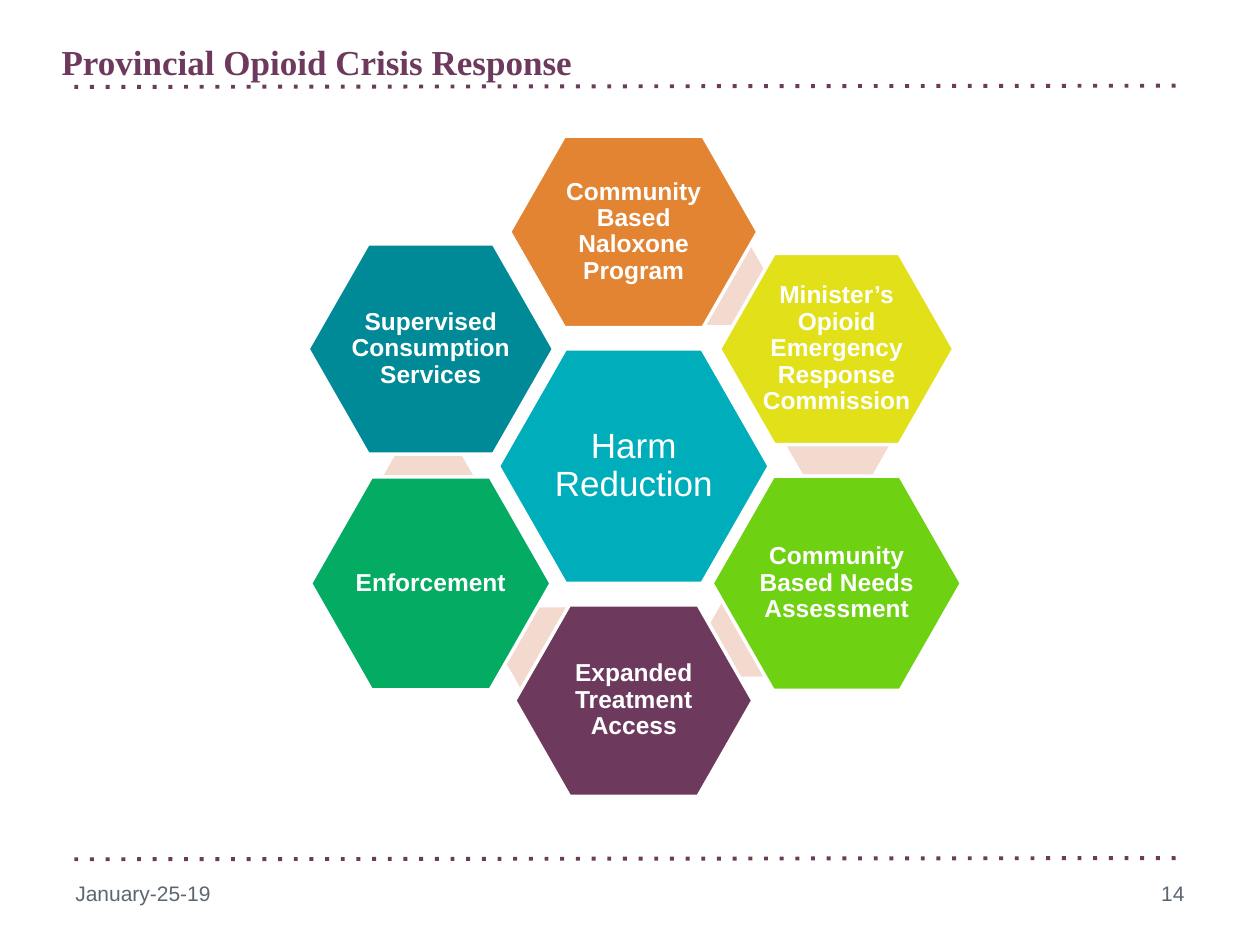
from dataclasses import dataclass
from math import cos, radians, sin

from lxml import etree
from pptx import Presentation
from pptx.dml.color import RGBColor
from pptx.enum.dml import MSO_LINE
from pptx.enum.shapes import MSO_CONNECTOR, MSO_SHAPE
from pptx.enum.text import MSO_ANCHOR, PP_ALIGN
from pptx.oxml.ns import qn
from pptx.util import Pt

PX = 9144  # 100 px to the inch
HEXAGON = MSO_SHAPE.HEXAGON
STRAIGHT = MSO_CONNECTOR.STRAIGHT
DOT = MSO_LINE.ROUND_DOT
TOP, MIDDLE = MSO_ANCHOR.TOP, MSO_ANCHOR.MIDDLE
LEFT, CENTER, RIGHT = PP_ALIGN.LEFT, PP_ALIGN.CENTER, PP_ALIGN.RIGHT


@dataclass(frozen=True)
class Theme:
    plum: str = "6D3A5D"
    white: str = "FFFFFF"
    grey: str = "5C6670"
    hub: str = "00ADBB"
    link: str = "F4D9CE"
    sans: str = "Arial"
    serif: str = "Times New Roman"
    heading: int = 20
    label: int = 14
    footer: int = 12


THEME = Theme()

# Clockwise from the top: label, fill, width, height
PETALS = [
    ("Community Based Naloxone Program", "E28432", 197, 152),
    ("Minister’s Opioid Emergency Response Commission", "E2E019", 186, 152),
    ("Community Based Needs Assessment", "6ED111", 198, 170),
    ("Expanded Treatment Access", THEME.plum, 189, 152),
    ("Enforcement", "04AB62", 191, 169),
    ("Supervised Consumption Services", "008996", 195, 167),
]
# Centre of the link behind each petal, measured from the hub; the last has none
LINKS = [(68, -147), (162, -16), (97, 132), (-66, 147), (-163, 16), None]


def px(*values):
    return [round(v * PX) for v in values]


def rgb(value):
    return RGBColor.from_string(value)


def write(sp, text, size, color, font=THEME.sans, bold=False, align=LEFT,
          anchor=MIDDLE, inset=(10, 5, 10, 5), spacing=None):
    tf = sp.text_frame
    left, top, right, bottom = px(*inset)
    frame = dict(word_wrap=True, vertical_anchor=anchor, margin_left=left,
                 margin_top=top, margin_right=right, margin_bottom=bottom)
    p = tf.paragraphs[0]
    r = p.add_run()
    r.text = text
    formats = [(tf, frame),
               (p, dict(alignment=align, line_spacing=spacing)),
               (r.font, dict(size=Pt(size), name=font, bold=bold))]
    for target, values in formats:
        for name, value in values.items():
            setattr(target, name, value)
    r.font.color.rgb = rgb(color)


def add_text(slide, box, text, size, color, **style):
    write(slide.shapes.add_textbox(*px(*box)), text, size, color, **style)


def add_rule(slide, x, y, w):
    """Dotted line that rises by one px over its width."""
    conn = slide.shapes.add_connector(STRAIGHT, *px(x, y, x + w, y - 1))
    conn.line.color.rgb = rgb(THEME.plum)
    conn.line.width = Pt(2.25)
    conn.line.dash_style = DOT
    next(conn._element.iter(qn("a:prstDash"))).set("val", "dot")
    etree.SubElement(conn._element.spPr, qn("a:effectLst"))


def add_hexagon(shapes, cx, cy, w, h, fill, outlined=True):
    sp = shapes.add_shape(HEXAGON, *px(cx - w / 2, cy - h / 2, w, h))
    sp.adjustments[0] = 0.286
    sp.shadow.inherit = False
    sp.fill.solid()
    sp.fill.fore_color.rgb = rgb(fill)
    if outlined:
        sp.line.color.rgb = rgb(THEME.white)
        sp.line.width = Pt(2)
    else:
        sp.line.fill.background()
    return sp


def header(slide, x, y, w, h):
    add_text(slide, (x, y, w, h), "Provincial Opioid Crisis Response",
             THEME.heading, THEME.plum, font=THEME.serif, bold=True,
             anchor=TOP, inset=(10, 8, 10, 5))
    add_rule(slide, x + 20, y + 45, 882)


def hexagon_cluster(slide, x, y, w, h):
    """Six petals evenly turned around a hub, with a link behind each."""
    shapes = slide.shapes.add_group_shape().shapes
    cx, cy = x + w / 2, y + h / 2
    radius = (h - PETALS[0][3]) / 2
    sp = add_hexagon(shapes, cx, cy, 215, 186, THEME.hub)
    write(sp, "Harm Reduction", THEME.heading, THEME.white, align=CENTER,
          inset=(3, 3, 3, 3), spacing=0.9)
    for i, ((label, fill, pw, ph), link) in enumerate(zip(PETALS, LINKS)):
        if link:
            add_hexagon(shapes, cx + link[0], cy + link[1], 81, 70,
                        THEME.link, outlined=False)
        angle = radians(60 * i)
        sp = add_hexagon(shapes, cx + radius * sin(angle),
                         cy - radius * cos(angle), pw, ph, fill)
        write(sp, label, THEME.label, THEME.white, bold=True, align=CENTER,
              inset=(2, 2, 2, 2), spacing=0.9)


def footer(slide, x, y, w, h):
    add_rule(slide, x + 9, y - 7, w - 18)
    field = 233
    add_text(slide, (x, y, field, h), "January-25-19", THEME.footer, THEME.grey)
    add_text(slide, (x + w - field, y, field, h), "14", THEME.footer,
             THEME.grey, align=RIGHT)


def main():
    prs = Presentation()
    prs.slide_width, prs.slide_height = px(1000, 750)
    slide = prs.slides.add_slide(prs.slide_layouts[6])
    header(slide, 39, 24, 756, 25)
    hexagon_cluster(slide, 243, 108, 520, 524)
    footer(slide, 50, 689, 900, 40)
    prs.save("out.pptx")


if __name__ == "__main__":
    main()
